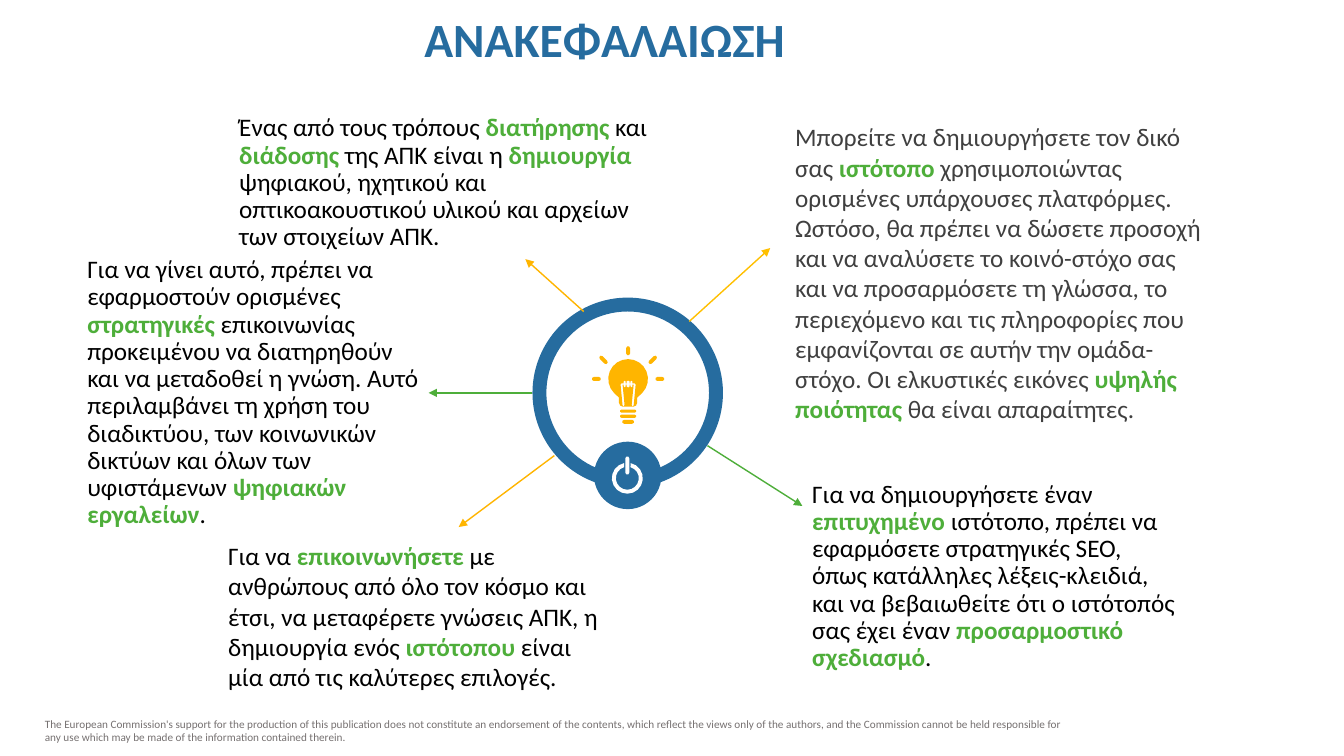
from dataclasses import dataclass
from math import cos, radians, sin

from lxml.etree import SubElement
from pptx import Presentation
from pptx.dml.color import RGBColor
from pptx.enum.shapes import MSO_CONNECTOR, MSO_SHAPE as Preset
from pptx.enum.text import MSO_ANCHOR as Anchor, MSO_AUTO_SIZE as AutoSize, PP_ALIGN as Align
from pptx.oxml.ns import qn
from pptx.util import Cm, Pt

Point = tuple[float, float]
Outline = list[Point]


@dataclass(frozen=True)
class Theme:
    font: str = "Calibri"
    blue: str = "266C9F"
    green: str = "4EAE3A"
    amber: str = "FFB500"
    gold: str = "FFC000"
    white: str = "FFFFFF"
    black: str = "000000"
    dark_grey: str = "404040"
    grey: str = "767171"
    title_size: float = 34.1
    body_size: float = 18
    footer_size: float = 8


THEME = Theme()


@dataclass(frozen=True)
class Note:
    """Text block in centimetres; words between asterisks are emphasised."""
    left: float
    top: float
    width: float
    height: float
    text: str
    color: str = THEME.black
    size: float = THEME.body_size
    spacing: float = 1.0


@dataclass(frozen=True)
class Arrow:
    start: Point
    end: Point
    color: str


FOOTER = Note(
    0.88, 17.95, 26.57, 0.94,
    "The European Commission's support for the production of this publication does not "
    "constitute an endorsement of the contents, which reflect the views only of the authors, "
    "and the Commission cannot be held responsible for any use which may be made of the "
    "information contained therein.", THEME.grey, THEME.footer_size)

NOTES = [
    Note(5.5, 13.47, 9.91, 4.11,
         "Για να *επικοινωνήσετε* με ανθρώπους από όλο τον κόσμο και έτσι, να μεταφέρετε "
         "γνώσεις ΑΠΚ, η δημιουργία ενός *ιστότοπου* είναι μία από τις καλύτερες επιλογές."),
    Note(19.79, 2.9, 10.77, 7.95,
         "Μπορείτε να δημιουργήσετε τον δικό σας *ιστότοπο* χρησιμοποιώντας ορισμένες "
         "υπάρχουσες πλατφόρμες. Ωστόσο, θα πρέπει να δώσετε προσοχή και να αναλύσετε το "
         "κοινό-στόχο σας και να προσαρμόσετε τη γλώσσα, το περιεχόμενο και τις πληροφορίες "
         "που εμφανίζονται σε αυτήν την ομάδα-στόχο. Οι ελκυστικές εικόνες "
         "*υψηλής ποιότητας* θα είναι απαραίτητες.", THEME.dark_grey),
    Note(20.22, 11.98, 9.8, 5.11,
         "Για να δημιουργήσετε έναν *επιτυχημένο *ιστότοπο, πρέπει να εφαρμόσετε στρατηγικές "
         "SEO, όπως κατάλληλες λέξεις-κλειδιά, και να βεβαιωθείτε ότι ο ιστότοπός σας έχει "
         "έναν *προσαρμοστικό σχεδιασμό*.", spacing=0.9),
    Note(5.78, 2.76, 10.82, 3.71,
         "Ένας από τους τρόπους *διατήρησης* και *διάδοσης* της ΑΠΚ είναι η *δημιουργία* "
         "ψηφιακού, ηχητικού και οπτικοακουστικού υλικού και αρχείων των στοιχείων ΑΠΚ.",
         spacing=0.9),
    Note(1.95, 6.31, 9.12, 7.19,
         "Για να γίνει αυτό, πρέπει να εφαρμοστούν ορισμένες *στρατηγικές* επικοινωνίας "
         "προκειμένου να διατηρηθούν και να μεταδοθεί η γνώση. Αυτό περιλαμβάνει τη χρήση του "
         "διαδικτύου, των κοινωνικών δικτύων και όλων των υφιστάμενων *ψηφιακών εργαλείων*.",
         spacing=0.9),
]

ARROWS = [
    Arrow((13.41, 9.9), (10.8, 9.9), THEME.green),
    Arrow((17.83, 11.23), (20.22, 12.75), THEME.green),
    Arrow((14.71, 7.85), (13.24, 6.53), THEME.amber),
    Arrow((17.37, 8.1), (19.41, 6.25), THEME.gold),
    Arrow((13.97, 11.48), (11.56, 13.28), THEME.amber),
]


def arc(x: float, y: float, radius: float, start: float, end: float, steps: int = 16) -> Outline:
    angles = [radians(start + (end - start) * i / steps) for i in range(steps + 1)]
    return [(x + radius * cos(a), y + radius * sin(a)) for a in angles]


def capsule(x: float, y: float, length: float, thick: float = 0.1, angle: float = 0) -> Outline:
    reach = (length - thick) / 2
    dx, dy = reach * cos(radians(angle)), reach * sin(radians(angle))
    return (arc(x + dx, y + dy, thick / 2, angle - 90, angle + 90, 3)
            + arc(x - dx, y - dy, thick / 2, angle + 90, angle + 270, 3))


def mirrored(half: Outline) -> Outline:
    return half + [(-x, y) for x, y in reversed(half) if x]


# Icon outlines, in centimetres around each icon's centre
GLASS = arc(0, 0, 0.5, 135, 405) + [
    (0.23, 0.47), (0.23, 0.6), (0.2, 0.67), (0.13, 0.7),
    (-0.13, 0.7), (-0.2, 0.67), (-0.23, 0.6), (-0.23, 0.47)]
FILAMENT = mirrored([
    (0, 0.04), (-0.04, 0.06), (-0.04, 0.11), (-0.06, 0.11), (-0.06, 0.06), (-0.09, 0.04),
    (-0.11, 0.06), (-0.11, 0.11), (-0.17, 0.11), (-0.19, 0.14), (-0.14, 0.67), (-0.11, 0.7),
    (-0.09, 0.65), (-0.14, 0.14), (-0.11, 0.14), (-0.11, 0.19), (-0.09, 0.22), (-0.06, 0.19),
    (-0.06, 0.14), (-0.04, 0.14), (-0.04, 0.19), (0, 0.22)])
SCREW = [capsule(0, 0.81, 0.41, 0.08), capsule(0, 0.94, 0.41, 0.08), capsule(0, 1.08, 0.3)]
RAYS = [capsule(x, y, length, angle=angle) for x, y, length, angle in [
    (-0.8, 0, 0.23, 0), (-0.62, -0.48, 0.26, 45), (0, -0.71, 0.23, 90),
    (0.62, -0.48, 0.26, -45), (0.8, 0, 0.23, 0)]]
BULB = [GLASS, FILAMENT, *SCREW, *RAYS]
POWER = [arc(0, 0, 0.39, -78, 258) + arc(0, 0, 0.29, 254, -74), capsule(0, -0.32, 0.46, angle=90)]


def paint(shape, color: str) -> None:
    shape.shadow.inherit = False
    shape.fill.solid()
    shape.fill.fore_color.rgb = RGBColor.from_string(color)
    shape.line.fill.background()


def add_run(paragraph, text: str, size: float, color: str, bold: bool = False) -> None:
    run = paragraph.add_run()
    run.text = text
    run.font.name, run.font.size, run.font.bold = THEME.font, Pt(size), bold
    run.font.color.rgb = RGBColor.from_string(color)


def draw_note(slide, note: Note, anchor: Anchor = Anchor.MIDDLE) -> None:
    box = slide.shapes.add_textbox(*map(Cm, (note.left, note.top, note.width, note.height)))
    frame = box.text_frame
    frame.word_wrap, frame.vertical_anchor = True, anchor
    frame.auto_size = AutoSize.SHAPE_TO_FIT_TEXT
    paragraph = frame.paragraphs[0]
    paragraph.line_spacing = note.spacing
    for i, text in enumerate(note.text.split("*")):
        strong = i % 2 == 1
        add_run(paragraph, text, note.size, THEME.green if strong else note.color, strong)


def draw_disc(slide, preset: Preset, left: float, top: float, size: float):
    disc = slide.shapes.add_shape(preset, Cm(left), Cm(top), Cm(size), Cm(size))
    paint(disc, THEME.blue)
    return disc


def draw_icon(slide, outlines: list[Outline], center: Point, color: str) -> None:
    fine = [[(x * 1000, y * 1000) for x, y in outline] for outline in outlines]
    builder = slide.shapes.build_freeform(*fine[0][0], scale=Cm(0.001))
    for i, outline in enumerate(fine):
        if i:
            builder.move_to(*outline[0])
        builder.add_line_segments(outline[1:], close=True)
    paint(builder.convert_to_shape(Cm(center[0]), Cm(center[1])), color)


def draw_arrow(slide, arrow: Arrow) -> None:
    line = slide.shapes.add_connector(MSO_CONNECTOR.STRAIGHT, *map(Cm, arrow.start + arrow.end))
    line.line.width = Pt(1)
    line.line.color.rgb = RGBColor.from_string(arrow.color)
    SubElement(line.line._get_or_add_ln(), qn("a:tailEnd"), type="triangle")
    SubElement(line._element.spPr, qn("a:effectLst"))


def draw_title(slide) -> None:
    title = slide.shapes.title
    title.left, title.top, title.width, title.height = map(Cm, (10.44, 0.51, 9.65, 2.01))
    frame = title.text_frame
    frame.word_wrap, frame.vertical_anchor = False, Anchor.TOP
    frame.auto_size = AutoSize.NONE
    paragraph = frame.paragraphs[0]
    paragraph.alignment, paragraph.line_spacing = Align.LEFT, 0.7
    add_run(paragraph, "ΑΝΑΚΕΦΑΛΑΙΩΣΗ", THEME.title_size, THEME.blue, True)


def main() -> None:
    deck = Presentation()
    deck.slide_width, deck.slide_height = Cm(33.87), Cm(19.05)
    slide = deck.slides.add_slide(deck.slide_layouts[5])

    # Title and footer
    draw_title(slide)
    draw_note(slide, FOOTER, Anchor.TOP)

    # Central ring with bulb and power button
    ring = draw_disc(slide, Preset.DONUT, 13.42, 7.5, 4.8)
    ring.adjustments[0] = 0.073
    draw_disc(slide, Preset.OVAL, 14.97, 11.13, 1.7)
    draw_icon(slide, BULB, (15.83, 9.55), THEME.amber)
    draw_icon(slide, POWER, (15.81, 12.05), THEME.white)

    # Arrows and the notes they point to
    for arrow in ARROWS:
        draw_arrow(slide, arrow)
    for note in NOTES:
        draw_note(slide, note)

    deck.save("out.pptx")


if __name__ == "__main__":
    main()
